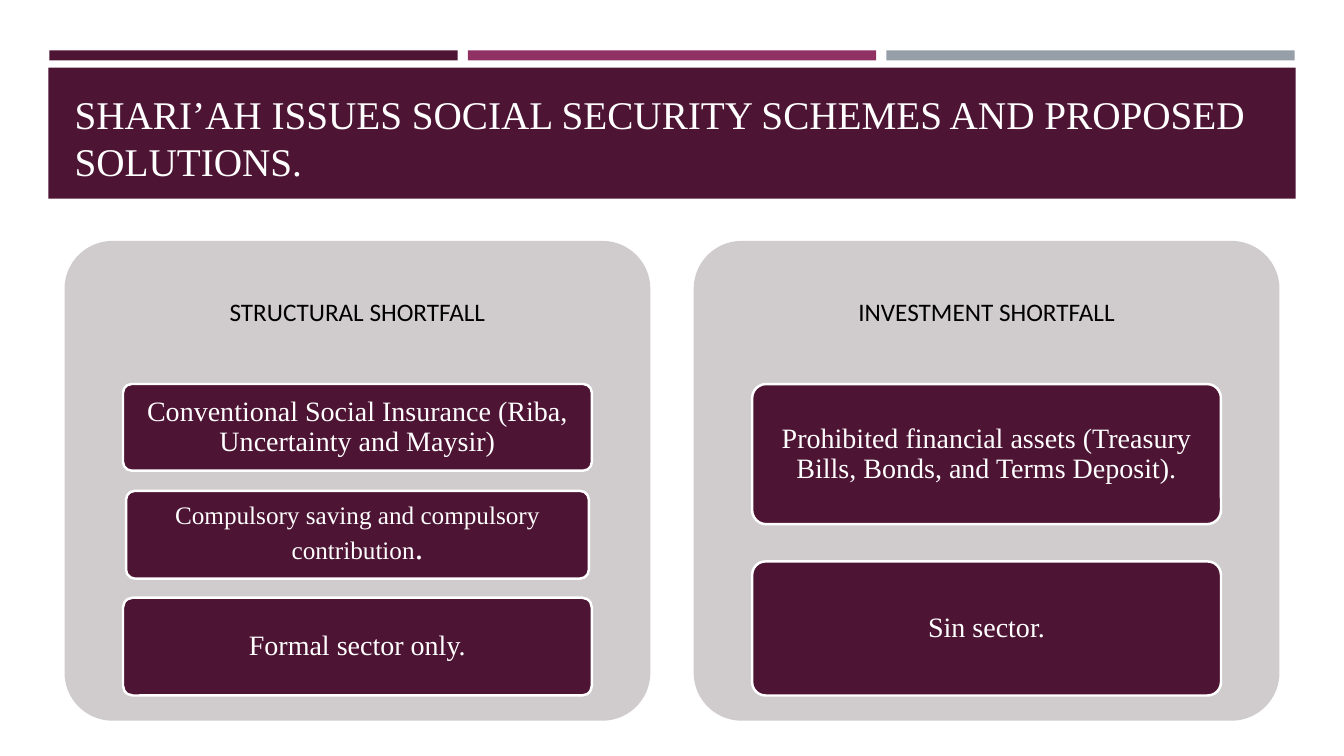
import pptx
import pptx.dml.color
import pptx.enum.shapes
import pptx.enum.text
import pptx.util

PX = 9144  # 100 px to the inch
COLORS = {
    "plum": "4D1434",
    "berry": "903163",
    "steel": "969FA7",
    "panel": "D0CCCE",
    "white": "FFFFFF",
    "black": "000000",
}
SERIF, SANS = "Times New Roman", "Calibri"
SHAPE = pptx.enum.shapes.MSO_SHAPE
ANCHOR = pptx.enum.text.MSO_ANCHOR
ALIGN = pptx.enum.text.PP_ALIGN

TITLE = "SHARI’AH ISSUES SOCIAL SECURITY SCHEMES AND PROPOSED SOLUTIONS."
# Each card: side inset from the common card edge, top within panel, height, spans
STRUCTURAL_CARDS = [
    (0, 142, 86, [("Conventional Social Insurance (Riba, Uncertainty and Maysir)", 20)]),
    (3, 248, 87, [("Compulsory saving and compulsory contribution", 18), (".", 24)]),
    (0, 354, 97, [("Formal sector only.", 20)]),
]
INVESTMENT_CARDS = [
    (0, 142, 139, [("Prohibited financial assets (Treasury Bills, Bonds, and Terms Deposit).", 20)]),
    (0, 318, 133, [("Sin sector.", 20)]),
]


def rgb(name):
    return pptx.dml.color.RGBColor.from_string(COLORS[name])


def emu(box):
    return [pptx.util.Emu(length * PX) for length in box]


def write(shape, spans, font=SERIF, color="white", align=ALIGN.CENTER,
          anchor=ANCHOR.MIDDLE, spacing=0.9, insets=(9, 7)):
    """Write (text, points) spans as one paragraph; insets are side and top/bottom px."""
    frame = shape.text_frame
    frame.word_wrap = True
    frame.auto_size = pptx.enum.text.MSO_AUTO_SIZE.NONE
    frame.vertical_anchor = anchor
    side, edge = emu(insets)
    frame.margin_left = frame.margin_right = side
    frame.margin_top = frame.margin_bottom = edge
    para = frame.paragraphs[0]
    para.alignment = align
    para.line_spacing = spacing
    for text, size in spans:
        span = para.add_run()
        span.text = text
        span.font.name = font
        span.font.size = pptx.util.Pt(size)
        span.font.color.rgb = rgb(color)


def add_block(page, box, fill, kind=SHAPE.RECTANGLE, outline=None):
    block = page.shapes.add_shape(kind, *emu(box))
    block.shadow.inherit = False
    block.fill.solid()
    block.fill.fore_color.rgb = rgb(fill)
    if outline:
        block.line.color.rgb = rgb(outline)
        block.line.width = pptx.util.Pt(1.75)
    else:
        block.line.fill.background()
    if kind == SHAPE.ROUNDED_RECTANGLE:
        block.adjustments[0] = 0.1
    return block


def add_header(page, box):
    left, top, width, height = box
    for index, fill in enumerate(["plum", "berry", "steel"]):
        add_block(page, (left + 1 + index * 415, top, 405, 10), fill)
    add_block(page, (left, top + 17, width, height - 17), "plum")

    title = page.shapes.title
    title.left, title.top, title.width, title.height = emu((left + 16, top + 27, 1206, 111))
    write(title, [(TITLE, 28)], align=ALIGN.LEFT, anchor=ANCHOR.BOTTOM,
          spacing=1.0, insets=(10, 5))
    page.shapes.element.append(title.element)  # bring in front of the band


def add_panel(page, box, heading, cards):
    left, top, width, height = box
    add_block(page, box, "panel", SHAPE.ROUNDED_RECTANGLE)
    label = page.shapes.add_textbox(*emu((left, top, width, 143)))
    write(label, [(heading, 18)], font=SANS, color="black", insets=(7, 7))
    for inset, offset, card_height, spans in cards:
        margin = 58 + inset
        card_box = (left + margin, top + offset, width - 2 * margin, card_height)
        card = add_block(page, card_box, "plum", SHAPE.ROUNDED_RECTANGLE, outline="white")
        write(card, spans)


def main():
    deck = pptx.Presentation()
    deck.slide_width, deck.slide_height = emu((1333, 750))
    page = deck.slides.add_slide(deck.slide_layouts.get_by_name("Title Only"))
    add_header(page, (48, 50, 1237, 147))
    add_panel(page, (64, 239, 581, 476), "STRUCTURAL SHORTFALL", STRUCTURAL_CARDS)
    add_panel(page, (688, 239, 581, 476), "INVESTMENT SHORTFALL", INVESTMENT_CARDS)
    deck.save("out.pptx")


if __name__ == "__main__":
    main()
